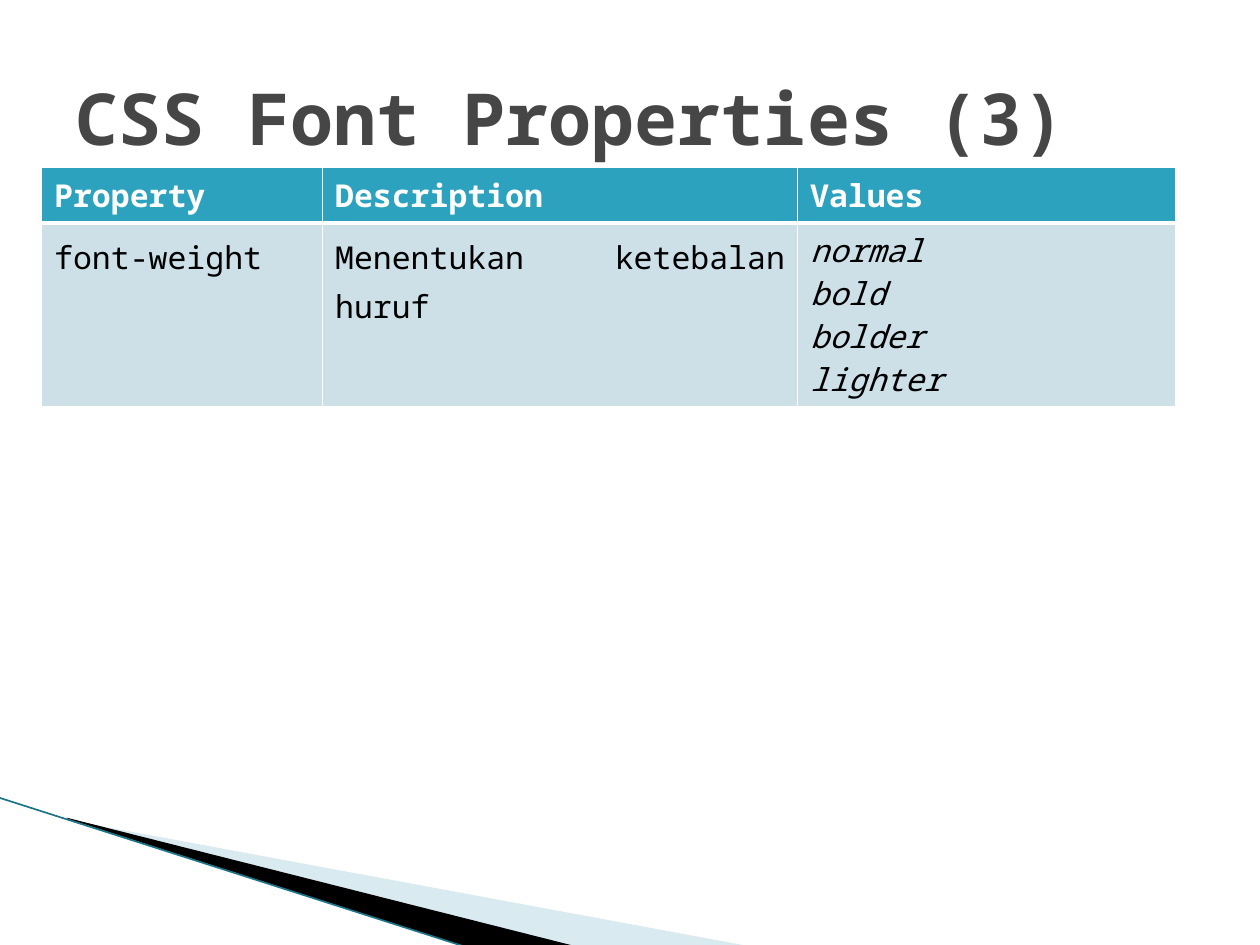
"""Build a slide on the CSS font-weight property."""
from lxml import etree
from pptx import Presentation
from pptx.dml.color import RGBColor
from pptx.enum.shapes import MSO_CONNECTOR
from pptx.enum.text import MSO_ANCHOR, PP_ALIGN
from pptx.oxml.ns import qn
from pptx.util import Inches, Pt

MIDDLE = MSO_ANCHOR.MIDDLE
JUSTIFY = PP_ALIGN.JUSTIFY
STRAIGHT = MSO_CONNECTOR.STRAIGHT
FONT = "Noto Sans Mono"
COLORS = {
    "title": "464646", "head": "2DA2BF", "body": "CDE0E8",
    "white": "FFFFFF", "black": "000000", "pale": "A0CBDC", "edge": "1B7587",
}
HEADS = ["Property", "Description", "Values"]
CELLS = ["font-weight", "Menentukan ketebalan huruf",
         "normal\vbold\vbolder\vlighter"]
WIDTHS = [2.23, 3.77, 3]
HEIGHTS = [0.44, 1.46]


def rgb(name):
    return RGBColor.from_string(COLORS[name])


def write(frame, text, size=18, color="black", bold=False, italic=False,
          align=None, spacing=None, after=None):
    para = frame.paragraphs[0]
    para.text = text
    para.alignment = align
    para.line_spacing = spacing
    if after is not None:
        para.space_after = Pt(after)
    for run in para.runs:
        font = run.font
        font.name, font.size = FONT, Pt(size)
        font.bold, font.italic = bold, italic
        font.color.rgb = rgb(color)


def set_frame(shape, left, top, width, height):
    shift = {"x": shape.left - left, "y": shape.top - top}
    for point in shape._element.iter(qn("a:pt")):
        for axis, delta in shift.items():
            point.set(axis, str(int(point.get(axis)) + delta))
    outline = shape._element.find(".//" + qn("a:path"))
    outline.set("w", str(width))
    outline.set("h", str(height))
    shape.left, shape.top, shape.width, shape.height = left, top, width, height


def add_wedge(slide, frame, points, color, alpha=None):
    start, *rest = [(Inches(x), Inches(y)) for x, y in points]
    outline = slide.shapes.build_freeform(*start)
    outline.add_line_segments(rest, close=True)
    wedge = outline.convert_to_shape()
    set_frame(wedge, *[Inches(n) for n in frame])
    wedge.shadow.inherit = False
    wedge.line.fill.background()
    wedge.fill.solid()
    wedge.fill.fore_color.rgb = rgb(color)
    if alpha:
        tint = wedge.fill._xPr.find(".//" + qn("a:srgbClr"))
        etree.SubElement(tint, qn("a:alpha"), val=str(alpha * 1000))


def add_edge(slide, start, end, color):
    ends = [Inches(n) for n in (*start, *end)]
    edge = slide.shapes.add_connector(STRAIGHT, *ends)
    edge.line.color.rgb = rgb(color)
    edge.line.width = Pt(0.95)
    etree.SubElement(edge._element.spPr, qn("a:effectLst"))


def add_title(slide, text):
    box = slide.shapes.add_textbox(Inches(0.5), Inches(0.3), Inches(9), Inches(1.25))
    frame = box.text_frame
    frame.word_wrap = True
    frame.vertical_anchor = MIDDLE
    write(frame, text, size=41, color="title", bold=True)


def set_borders(cell, **widths):
    props = cell._tc.get_or_add_tcPr()
    for side, width in widths.items():
        line = etree.SubElement(props, qn("a:ln" + side), w=str(Pt(width)))
        fill = etree.SubElement(line, qn("a:solidFill"))
        etree.SubElement(fill, qn("a:srgbClr"), val=COLORS["white"])


def fill_cell(cell, text, fill, rule, **style):
    set_borders(cell, L=1, R=1, T=rule[0], B=rule[1])
    cell.fill.solid()
    cell.fill.fore_color.rgb = rgb(fill)
    write(cell.text_frame, text, **style)


def add_grid(slide):
    table = slide.shapes.add_table(
        2, 3, Inches(0.33), Inches(1.33), Inches(sum(WIDTHS)),
        Inches(sum(HEIGHTS))).table
    table.horz_banding = False
    for row, height in zip(table.rows, HEIGHTS):
        row.height = Inches(height)
    prose = dict(align=JUSTIFY, spacing=1.15, after=10)
    styles = [prose, prose, dict(italic=True)]
    for i, width in enumerate(WIDTHS):
        table.columns[i].width = Inches(width)
        fill_cell(table.cell(0, i), HEADS[i], "head", (1, 3), color="white", bold=True)
        fill_cell(table.cell(1, i), CELLS[i], "body", (3, 1), **styles[i])


def main():
    deck = Presentation()
    deck.slide_width, deck.slide_height = Inches(10), Inches(7.5)
    slide = deck.slides.add_slide(deck.slide_layouts[6])
    add_wedge(slide, (0.78, 5.47, 4.16, 1.58),
              [(0.55, 6.51), (5.95, 7.51), (4.56, 7.51), (0.55, 6.5)], "pale", 40)
    add_wedge(slide, (-0.06, 6.33, 4.16, 0.92),
              [(0.53, 6.49), (4.57, 7.51), (3.72, 7.52), (0.54, 6.5)], "black")
    add_edge(slide, (-0.01, 6.33), (3.71, 7.52), "edge")
    add_title(slide, "CSS Font Properties (3)")
    add_grid(slide)
    deck.save("out.pptx")


if __name__ == "__main__":
    main()
